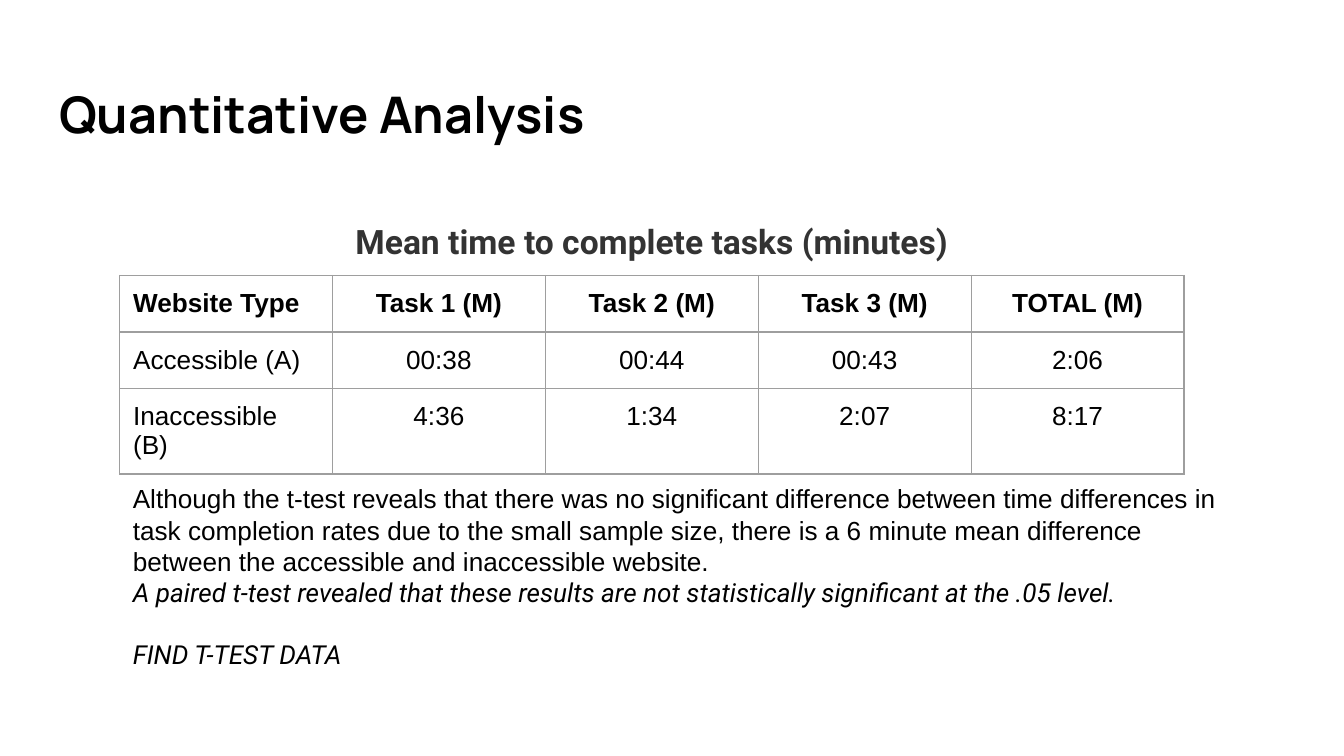
"""Build the quantitative analysis slide with its task time table."""
from dataclasses import dataclass

from lxml.etree import SubElement
from pptx import Presentation
from pptx.dml.color import RGBColor
from pptx.enum.text import MSO_ANCHOR as Anchor, MSO_AUTO_SIZE as AutoSize, PP_ALIGN as Align
from pptx.oxml import parse_xml
from pptx.oxml.ns import nsdecls, qn
from pptx.util import Inches, Pt

BLACK = RGBColor(0x00, 0x00, 0x00)
CHARCOAL = RGBColor(0x33, 0x33, 0x33)
GREY = RGBColor(0x9E, 0x9E, 0x9E)
SLIDE_WIDTH = Inches(10)
SLIDE_HEIGHT = SLIDE_WIDTH * 9 // 16
MARGINS = ("margin_left", "margin_top", "margin_right", "margin_bottom")
TABLE_WIDTH, ROW_HEIGHT = 7.92, 0.42
ROWS = (
    ("Website Type", "Task 1 (M)", "Task 2 (M)", "Task 3 (M)", "TOTAL (M)"),
    ("Accessible (A)", "00:38", "00:44", "00:43", "2:06"),
    ("Inaccessible (B)", "4:36", "1:34", "2:07", "8:17"),
)


@dataclass(frozen=True)
class Style:
    size: float
    name: str
    color: RGBColor = BLACK
    bold: bool = False
    italic: bool = False


@dataclass(frozen=True)
class Para:
    text: str
    style: Style
    align: Align = Align.LEFT
    before: float = 0
    after: float = 0
    spacing: float = 1.0


TITLE = Style(27, "Manrope", bold=True)
CAPTION = Style(18, "Roboto", CHARCOAL, bold=True)
HEADER = Style(14, "Arial", bold=True)
PLAIN = Style(14, "Arial")
ITALIC = Style(14, "Roboto", italic=True)
NOTES = (
    Para("Although the t-test reveals that there was no significant difference between "
         "time differences in task completion rates due to the small sample size, there is "
         "a 6 minute mean difference between the accessible and inaccessible website.", PLAIN),
    Para("A paired t-test revealed that these results are not statistically significant "
         "at the .05 level.", ITALIC),
    Para("FIND T-TEST DATA", ITALIC, before=16.5),
)


def set_attrs(obj, values: dict) -> None:
    for key, value in values.items():
        setattr(obj, key, value)


def write(tf, paras: tuple[Para, ...]) -> None:
    for i, para in enumerate(paras):
        p = tf.add_paragraph() if i else tf.paragraphs[0]
        set_attrs(p, {"alignment": para.align, "space_before": Pt(para.before),
                      "space_after": Pt(para.after), "line_spacing": para.spacing})
        r = p.add_run()
        r.text = para.text
        st = para.style
        set_attrs(r.font, {"size": Pt(st.size), "name": st.name,
                           "bold": st.bold, "italic": st.italic})
        r.font.color.rgb = st.color


def fill_box(sp, at: tuple[float, ...], paras: tuple[Para, ...], anchor=Anchor.TOP) -> None:
    set_attrs(sp, dict(zip(("left", "top", "width", "height"), map(Inches, at))))
    tf = sp.text_frame
    set_attrs(tf, {"word_wrap": True, "auto_size": AutoSize.NONE, "vertical_anchor": anchor})
    set_attrs(tf, dict.fromkeys(MARGINS, Inches(0.1)))
    write(tf, paras)


def remove_bullet(p) -> None:
    pPr = p._p.get_or_add_pPr()
    pPr.set("marL", "0")
    pPr.set("indent", "0")
    SubElement(pPr, qn("a:buNone"))


def add_borders(cell) -> None:
    tcPr = cell._tc.get_or_add_tcPr()
    for i, side in enumerate("LRTB"):
        tcPr.insert(i, parse_xml(
            f'<a:ln{side} {nsdecls("a")} w="{Pt(0.75)}"><a:solidFill>'
            f'<a:srgbClr val="{GREY}"/></a:solidFill></a:ln{side}>'))


def add_time_table(s, left: float, top: float) -> None:
    n_rows, n_cols = len(ROWS), len(ROWS[0])
    table = s.shapes.add_table(n_rows, n_cols, Inches(left), Inches(top),
                               Inches(TABLE_WIDTH), Inches(ROW_HEIGHT * n_rows)).table
    for i, row in enumerate(ROWS):
        table.rows[i].height = Inches(ROW_HEIGHT)
        for j, text in enumerate(row):
            cell = table.cell(i, j)
            cell.fill.background()
            add_borders(cell)
            set_attrs(cell, dict.fromkeys(MARGINS, Inches(0.1)))
            write(cell.text_frame, (Para(text, PLAIN if i else HEADER,
                                         Align.CENTER if j else Align.LEFT),))


def main() -> None:
    prs = Presentation()
    set_attrs(prs, {"slide_width": SLIDE_WIDTH, "slide_height": SLIDE_HEIGHT})
    s = prs.slides.add_slide(prs.slide_layouts[1])
    fill_box(s.shapes.title, (0.34, 0.49, 9.32, 0.68),
             (Para("Quantitative Analysis", TITLE),), Anchor.BOTTOM)
    body = s.placeholders[1]
    remove_bullet(body.text_frame.paragraphs[0])
    fill_box(body, (2.39, 1.5, 4.92, 0.55),
             (Para("Mean time to complete tasks (minutes)", CAPTION, Align.CENTER,
                   after=12, spacing=1.15),))
    add_time_table(s, 0.89, 2.05)
    fill_box(s.shapes.add_textbox(0, 0, 0, 0), (0.89, 3.49, 8.43, 1.62), NOTES)
    prs.save("out.pptx")


if __name__ == "__main__":
    main()
